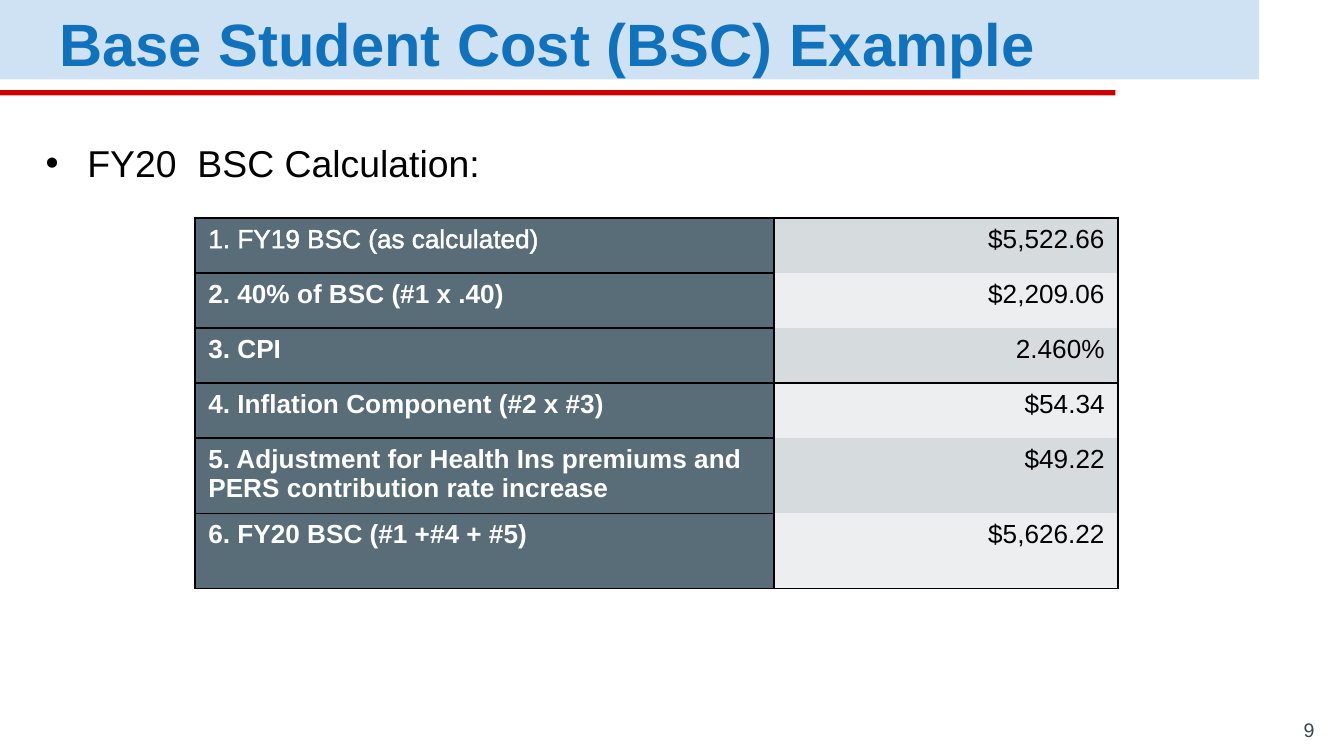
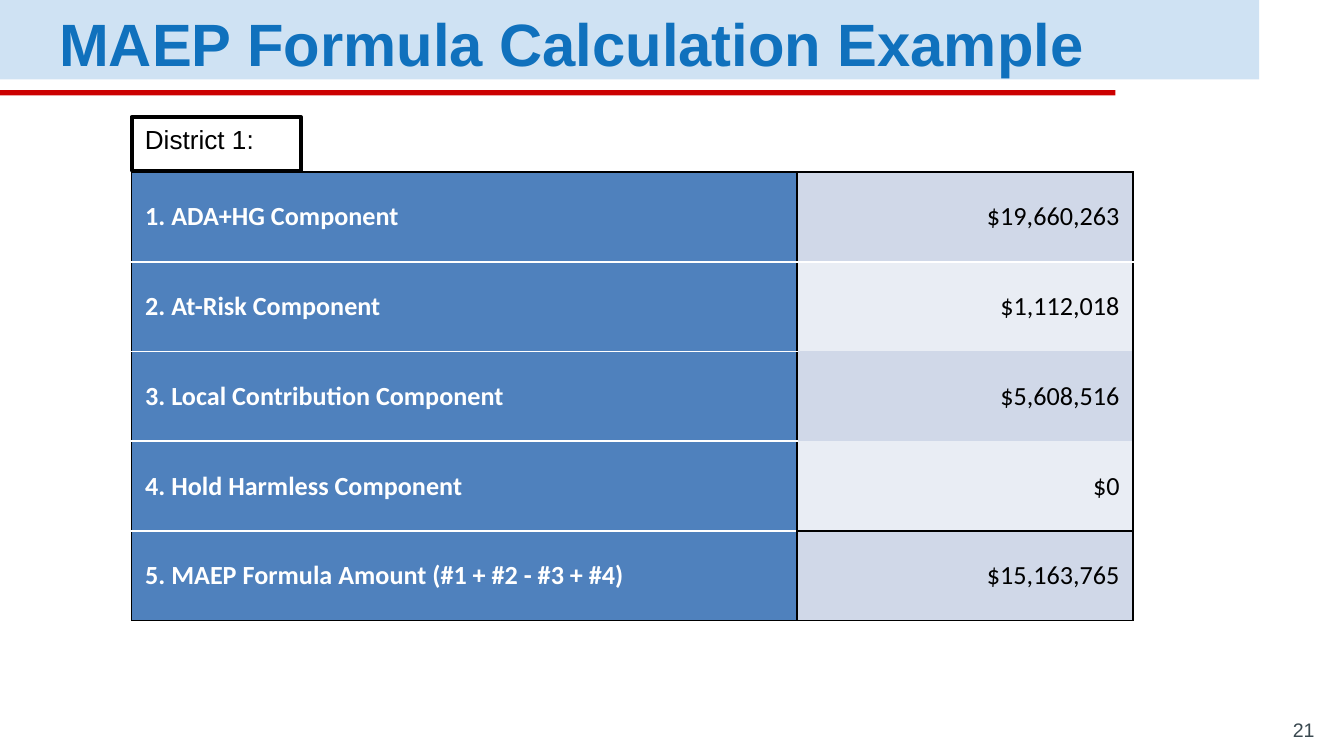
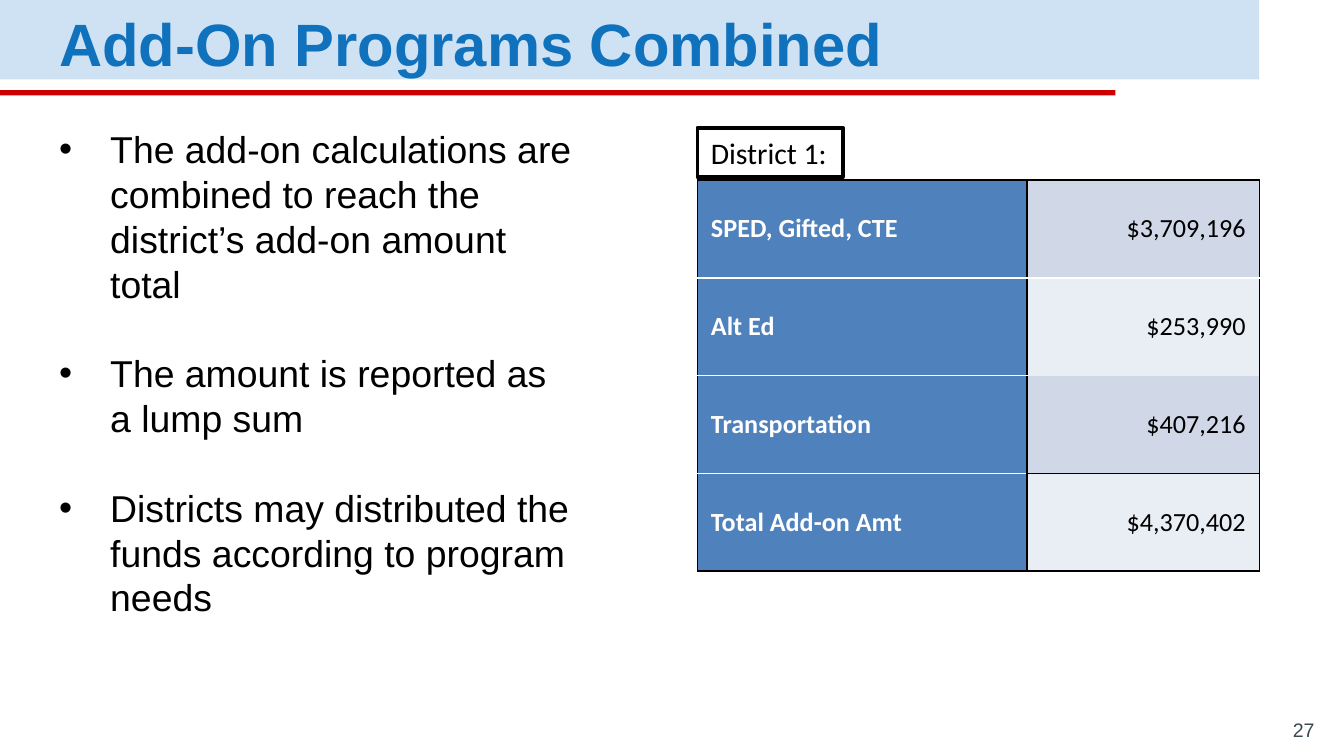
"""Build three slides that explain school funding calculations."""
import lxml.etree
import pptx
import pptx.dml.color
import pptx.enum.shapes
import pptx.enum.text
import pptx.oxml.ns
import pptx.util

Inches = pptx.util.Inches
Pt = pptx.util.Pt
RGBColor = pptx.dml.color.RGBColor
Align = pptx.enum.text.PP_ALIGN
Anchor = pptx.enum.text.MSO_ANCHOR
qualify = pptx.oxml.ns.qn

BLACK = RGBColor(0x00, 0x00, 0x00)
WHITE = RGBColor(0xFF, 0xFF, 0xFF)
BAND_BLUE = RGBColor(0xCF, 0xE2, 0xF3)
RULE_RED = RGBColor(0xCC, 0x00, 0x00)
TITLE_BLUE = RGBColor(0x10, 0x71, 0xBD)
NUMBER_GRAY = RGBColor(0x3A, 0x49, 0x50)
SLATE = RGBColor(0x58, 0x6D, 0x77)
SLATE_BANDS = (RGBColor(0xD6, 0xDB, 0xDE), RGBColor(0xEC, 0xEE, 0xEF))
BLUE = RGBColor(0x4F, 0x81, 0xBD)
BLUE_BANDS = (RGBColor(0xD0, 0xD8, 0xE8), RGBColor(0xE9, 0xED, 0xF4))

TITLE_AND_CONTENT = 1
TITLE_ONLY = 5


def write_text(paragraph, text, size=14, font="Arial", color=BLACK, bold=False,
               align=Align.LEFT):
    """Add a formatted run to a paragraph and return it."""
    paragraph.alignment = align
    run = paragraph.add_run()
    run.text = text
    run.font.size = Pt(size)
    run.font.name = font
    run.font.bold = bold
    run.font.color.rgb = color
    return run


def add_line(parent, tag, color, width):
    """Append a line element; no colour means no line."""
    line = lxml.etree.SubElement(parent, qualify(tag), w=str(Pt(width)))
    if color is None:
        lxml.etree.SubElement(line, qualify("a:noFill"))
    else:
        fill = lxml.etree.SubElement(line, qualify("a:solidFill"))
        lxml.etree.SubElement(fill, qualify("a:srgbClr"), val=str(color))
    return line


def outline_run(run, color, width):
    """Draw an outline around the letters of a run."""
    properties = run._r.get_or_add_rPr()
    properties.insert(0, add_line(properties, "a:ln", color, width))


def place(shape, left, top, width, height):
    """Move and size a shape, in inches."""
    shape.left, shape.top = Inches(left), Inches(top)
    shape.width, shape.height = Inches(width), Inches(height)


def set_frame(frame, anchor, inset=None):
    """Set wrapping, anchoring and optional equal insets of a text frame."""
    frame.word_wrap = True
    frame.auto_size = pptx.enum.text.MSO_AUTO_SIZE.NONE
    frame.vertical_anchor = anchor
    if inset is not None:
        frame.margin_left = frame.margin_right = Inches(inset)
        frame.margin_top = frame.margin_bottom = Inches(inset)


def add_rectangle(slide, left, top, width, height, fill):
    """Add a plain filled rectangle without a line."""
    shape = slide.shapes.add_shape(
        pptx.enum.shapes.MSO_SHAPE.RECTANGLE,
        Inches(left), Inches(top), Inches(width), Inches(height))
    shape.shadow.inherit = False
    shape.fill.solid()
    shape.fill.fore_color.rgb = fill
    shape.line.fill.background()
    return shape


def add_master_bands(presentation, slide):
    """Put the title band and the red rule on the slide master."""
    bands = (add_rectangle(slide, 0, 0, 9.37, 0.59, BAND_BLUE),
             add_rectangle(slide, 0, 0.67, 8.3, 0.04, RULE_RED))
    for index, band in enumerate(bands):
        band.element.nvSpPr.cNvPr.id = 20 + index
        presentation.slide_master.shapes.element.insert(2 + index, band.element)


def add_slide(presentation, layout, title, number):
    """Add a slide with its title and slide number."""
    slide = presentation.slides.add_slide(presentation.slide_layouts[layout])
    place(slide.shapes.title, 0.34, 0.03, 9.03, 0.49)
    frame = slide.shapes.title.text_frame
    set_frame(frame, Anchor.MIDDLE, 0.1)
    paragraph = frame.paragraphs[0]
    paragraph.line_spacing = 1.15
    paragraph.space_after = Pt(16)
    write_text(paragraph, title, size=32, color=TITLE_BLUE, bold=True)

    number_box = slide.shapes.add_textbox(
        Inches(9.28), Inches(5.36), Inches(0.6), Inches(0.26))
    set_frame(number_box.text_frame, Anchor.BOTTOM, 0.1)
    write_text(number_box.text_frame.paragraphs[0], str(number), size=10.5,
               color=NUMBER_GRAY, align=Align.RIGHT)
    return slide


def fill_bullets(slide, position, indent, items):
    """Fill the body placeholder with a bulleted list."""
    body = slide.placeholders[1]
    place(body, *position)
    frame = body.text_frame
    set_frame(frame, Anchor.TOP)
    for index, item in enumerate(items):
        paragraph = frame.add_paragraph() if index else frame.paragraphs[0]
        properties = paragraph._p.get_or_add_pPr()
        properties.set("marL", str(Inches(indent)))
        properties.set("indent", str(-Inches(indent)))
        lxml.etree.SubElement(properties, qualify("a:buFont"), typeface="Arial")
        lxml.etree.SubElement(properties, qualify("a:buChar"), char="•")
        paragraph.space_before = Pt(24 if index else 0)
        write_text(paragraph, item, size=20)


def add_district_box(slide, left, top, width, height, **text_format):
    """Add the outlined box that names the district."""
    box = add_rectangle(slide, left, top, width, height, WHITE)
    box.line.color.rgb = BLACK
    box.line.width = Pt(2)
    set_frame(box.text_frame, Anchor.TOP)
    write_text(box.text_frame.paragraphs[0], "District 1:", **text_format)


def style_cell(cell, fill, top, bottom, anchor):
    """Set fill, anchor and borders; the sides are always black."""
    cell.vertical_anchor = anchor
    properties = cell._tc.get_or_add_tcPr()
    borders = {"a:lnL": BLACK, "a:lnR": BLACK, "a:lnT": top, "a:lnB": bottom}
    for tag, color in borders.items():
        add_line(properties, tag, color, 1)
    cell.fill.solid()
    cell.fill.fore_color.rgb = fill


def add_amount_table(slide, left, top, widths, heights, rows, label_fill, bands,
                     label_divider, value_dividers, font, anchor):
    """Add a two-column table of labels and amounts and return it."""
    table = slide.shapes.add_table(
        len(rows), 2, Inches(left), Inches(top),
        Inches(sum(widths)), Inches(sum(heights))).table
    table.first_row = table.horz_banding = False
    for column, width in zip(table.columns, widths):
        column.width = Inches(width)
    label_lines = [BLACK, *[label_divider] * (len(rows) - 1), BLACK]
    value_lines = [BLACK, *value_dividers, BLACK]
    for index, (label, amount) in enumerate(rows):
        table.rows[index].height = Inches(heights[index])
        label_cell, value_cell = table.cell(index, 0), table.cell(index, 1)
        style_cell(label_cell, label_fill, *label_lines[index:index + 2], anchor)
        style_cell(value_cell, bands[index % 2], *value_lines[index:index + 2], anchor)
        write_text(label_cell.text_frame.paragraphs[0], label, font=font,
                   color=WHITE, bold=True)
        write_text(value_cell.text_frame.paragraphs[0], amount, font=font,
                   align=Align.RIGHT)
    return table


def add_district_table(slide, left, top, widths, height, rows):
    """Add a blue district table of equal rows whose last row is the total."""
    heights = [height / len(rows)] * len(rows)
    add_amount_table(
        slide, left, top, widths, heights, rows, BLUE, BLUE_BANDS,
        WHITE, [WHITE, *[None] * (len(rows) - 3), BLACK], "Calibri", Anchor.MIDDLE)


def build_base_cost_slide(presentation):
    """Build the base student cost slide."""
    slide = add_slide(presentation, TITLE_AND_CONTENT,
                      "Base Student Cost (BSC) Example", 9)
    add_master_bands(presentation, slide)
    fill_bullets(slide, (0.24, 0.99, 9.12, 0.44), 0.31, ["FY20  BSC Calculation:"])
    rows = [
        ("1. FY19 BSC (as calculated)", "$5,522.66"),
        ("2. 40% of BSC (#1 x .40)", "$2,209.06"),
        ("3. CPI", "2.460%"),
        ("4. Inflation Component (#2 x #3)", "$54.34"),
        ("5. Adjustment for Health Ins premiums and PERS contribution rate increase",
         "$49.22"),
        ("6. FY20 BSC (#1 +#4 + #5)", "$5,626.22"),
    ]
    table = add_amount_table(
        slide, 1.45, 1.62, (4.31, 2.56), [0.41] * 4 + [0.56] * 2, rows, SLATE,
        SLATE_BANDS, BLACK, [None, None, BLACK, None, None], "Arial", Anchor.TOP)
    first_label = table.cell(0, 0).text_frame.paragraphs[0].runs[0]
    first_label.font.bold = False
    outline_run(first_label, WHITE, 0.75)


def build_formula_slide(presentation):
    """Build the formula calculation slide."""
    slide = add_slide(presentation, TITLE_ONLY, "MAEP Formula Calculation Example", 21)
    add_district_table(slide, 0.98, 1.28, (4.95, 2.5), 3.34, [
        ("1. ADA+HG Component", "$19,660,263"),
        ("2. At-Risk Component", "$1,112,018"),
        ("3. Local Contribution Component", "$5,608,516"),
        ("4. Hold Harmless Component", "$0"),
        ("5. MAEP Formula Amount (#1 + #2 - #3 + #4)", "$15,163,765"),
    ])
    add_district_box(slide, 0.98, 0.87, 1.26, 0.4)


def build_add_on_slide(presentation):
    """Build the combined add-on programs slide."""
    slide = add_slide(presentation, TITLE_AND_CONTENT, "Add-On Programs Combined", 27)
    fill_bullets(slide, (0.34, 0.89, 4.04, 3.8), 0.38, [
        "The add-on calculations are combined to reach the district’s add-on amount total",
        "The amount is reported as a lump sum",
        "Districts may distributed the funds according to program needs",
    ])
    add_district_table(slide, 5.19, 1.34, (2.45, 1.73), 2.91, [
        ("SPED, Gifted, CTE", "$3,709,196"),
        ("Alt Ed", "$253,990"),
        ("Transportation", "$407,216"),
        ("Total Add-on Amt", "$4,370,402"),
    ])
    add_district_box(slide, 5.19, 0.95, 1.08, 0.37, size=16, font="Calibri")


def main():
    """Build and save the presentation."""
    presentation = pptx.Presentation()
    presentation.slide_width = Inches(10)
    presentation.slide_height = presentation.slide_width * 9 // 16
    build_base_cost_slide(presentation)
    build_formula_slide(presentation)
    build_add_on_slide(presentation)
    presentation.save("out.pptx")


if __name__ == "__main__":
    main()
